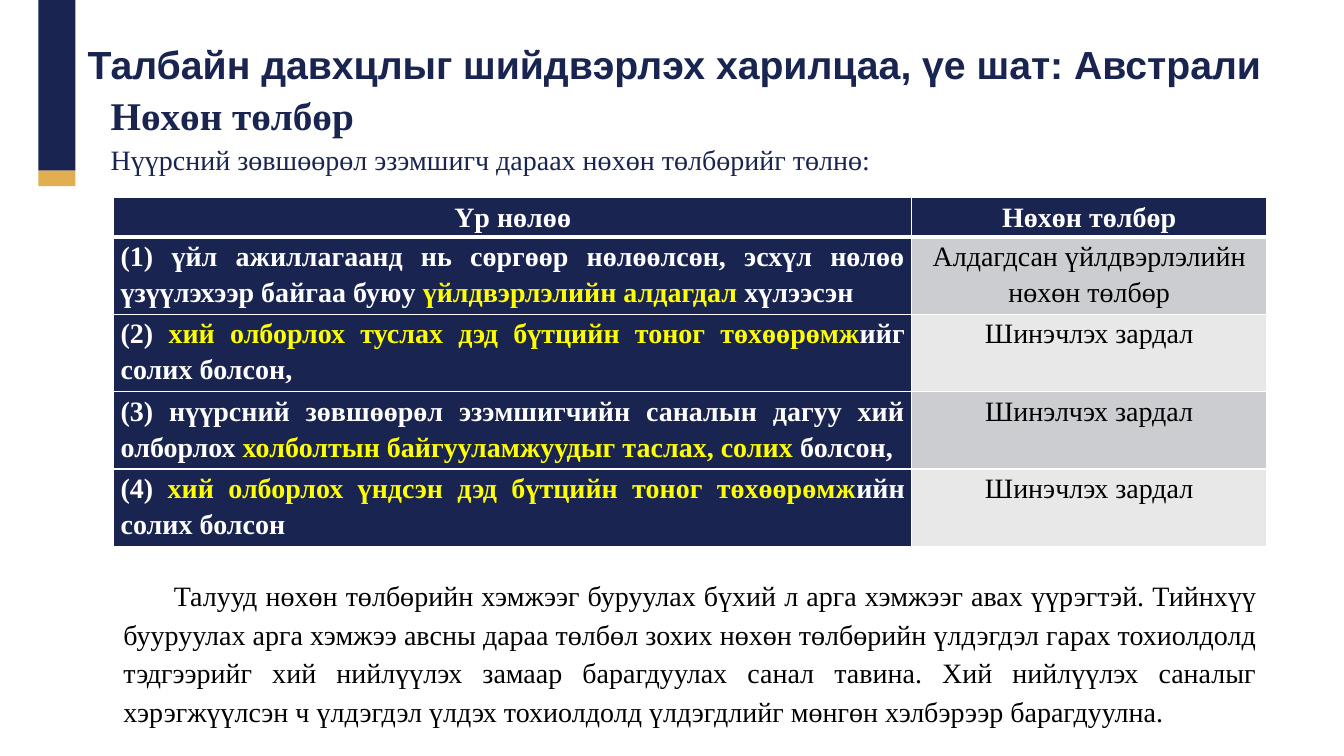
from dataclasses import dataclass

from lxml.etree import SubElement
from pptx import Presentation
from pptx.dml.color import RGBColor
from pptx.enum.shapes import MSO_SHAPE
from pptx.enum.text import MSO_ANCHOR, PP_ALIGN
from pptx.oxml.ns import qn
from pptx.util import Cm, Pt


@dataclass(frozen=True)
class Theme:
    """Colours, fonts and type sizes of the slide."""
    navy: str = "192450"
    gold: str = "E3AE50"
    white: str = "FFFFFF"
    black: str = "000000"
    yellow: str = "FFFF00"
    bands: tuple = ("CCCDD0", "E8E8E9")
    sans: str = "Arial"
    serif: str = "Times New Roman"
    large: int = 28
    body: int = 20


def apply(target, values):
    """Set every attribute named in values on target."""
    for name, value in values.items():
        setattr(target, name, value)


class SlideBuilder:
    """Draws elements on one slide in the style of a theme."""

    def __init__(self, page, theme):
        self.page = page
        self.theme = theme

    def bar(self, left, top, width, height, color):
        """Add a plain filled rectangle."""
        bar = self.page.shapes.add_shape(
            MSO_SHAPE.RECTANGLE, Cm(left), Cm(top), Cm(width), Cm(height))
        bar.shadow.inherit = False
        bar.fill.solid()
        bar.fill.fore_color.rgb = RGBColor.from_string(color)
        bar.line.fill.background()

    def fill_para(self, para, spans, layout, **font):
        """Fill a paragraph with (text, colour) spans."""
        apply(para, layout)
        values = {"name": self.theme.serif, "size": Pt(self.theme.body), "bold": False} | font
        for text, color in spans:
            span = para.add_run()
            span.text = text
            apply(span.font, values)
            span.font.color.rgb = RGBColor.from_string(color)

    def text_box(self, left, top, width, height, wrap=True):
        """Add an empty text box and return its text frame."""
        box = self.page.shapes.add_textbox(Cm(left), Cm(top), Cm(width), Cm(height))
        box.text_frame.word_wrap = wrap
        return box.text_frame

    def border(self, cell, top, bottom):
        """Draw white borders round a cell, one point wide at the sides."""
        properties = cell._tc.get_or_add_tcPr()
        for tag, width in (("a:lnL", 1), ("a:lnR", 1), ("a:lnT", top), ("a:lnB", bottom)):
            line = SubElement(properties, qn(tag), w=str(Pt(width)))
            SubElement(SubElement(line, qn("a:solidFill")), qn("a:srgbClr"), val=self.theme.white)

    def cell(self, cell, spans, fill, align, bold, top=1, bottom=1):
        """Style one table cell and set its text."""
        apply(cell, {"margin_left": Cm(0.18), "margin_right": Cm(0.18), "margin_top": 0,
                     "margin_bottom": 0, "vertical_anchor": MSO_ANCHOR.TOP})
        self.border(cell, top, bottom)
        cell.fill.solid()
        cell.fill.fore_color.rgb = RGBColor.from_string(fill)
        self.fill_para(cell.text_frame.paragraphs[0], spans,
                       {"alignment": align, "line_spacing": 1.15}, bold=bold)

    def table(self, left, top, widths, heights, headings, rows):
        """Add the table of impacts and compensations."""
        theme = self.theme
        table = self.page.shapes.add_table(
            len(heights), len(widths), Cm(left), Cm(top),
            Cm(sum(widths)), Cm(sum(heights))).table
        for column, width in zip(table.columns, widths):
            column.width = Cm(width)
        for row, height in zip(table.rows, heights):
            row.height = Cm(height)
        for index, heading in enumerate(headings):
            self.cell(table.cell(0, index), [(heading, theme.white)], theme.navy,
                      PP_ALIGN.CENTER, True, bottom=3)
        for index, (before, marked, after, payment) in enumerate(rows):
            line = index + 1
            top_width = 3 if index == 0 else 1
            impact = [(before, theme.white), (marked, theme.yellow), (after, theme.white)]
            self.cell(table.cell(line, 0), impact, theme.navy,
                      PP_ALIGN.JUSTIFY, True, top=top_width)
            self.cell(table.cell(line, 1), [(payment, theme.black)], theme.bands[index % 2],
                      PP_ALIGN.CENTER, False, top=top_width)


IMPACTS = [
    ("(1) үйл ажиллагаанд нь сөргөөр нөлөөлсөн, эсхүл нөлөө үзүүлэхээр байгаа буюу ",
     "үйлдвэрлэлийн алдагдал", " хүлээсэн", "Алдагдсан үйлдвэрлэлийн нөхөн төлбөр"),
    ("(2) ", "хий олборлох туслах дэд бүтцийн тоног төхөөрөмж", "ийг солих болсон,",
     "Шинэчлэх зардал"),
    ("(3) нүүрсний зөвшөөрөл эзэмшигчийн саналын дагуу хий олборлох ",
     "холболтын байгууламжуудыг таслах, солих ", "болсон,", "Шинэлчэх зардал"),
    ("(4) ", "хий олборлох үндсэн дэд бүтцийн тоног төхөөрөмж", "ийн солих болсон",
     "Шинэчлэх зардал"),
]
CLOSING = (
    "Талууд нөхөн төлбөрийн хэмжээг буруулах бүхий л арга хэмжээг авах үүрэгтэй. "
    "Тийнхүү бууруулах арга хэмжээ авсны дараа төлбөл зохих нөхөн төлбөрийн үлдэгдэл "
    "гарах тохиолдолд тэдгээрийг хий нийлүүлэх замаар барагдуулах санал тавина. "
    "Хий нийлүүлэх саналыг хэрэгжүүлсэн ч үлдэгдэл үлдэх тохиолдолд үлдэгдлийг мөнгөн "
    "хэлбэрээр барагдуулна.")


def main():
    """Build the slide and save the deck."""
    theme = Theme()
    deck = Presentation()
    apply(deck, {"slide_width": Cm(33.87), "slide_height": Cm(19.05)})
    builder = SlideBuilder(deck.slides.add_slide(deck.slide_layouts[6]), theme)

    builder.bar(0.97, 0, 0.93, 4.3, theme.navy)
    builder.bar(0.97, 4.3, 0.93, 0.39, theme.gold)

    intro = builder.text_box(2.54, 2.31, 29.36, 2.4)
    layout = {"alignment": PP_ALIGN.JUSTIFY, "line_spacing": 0.9, "space_before": Pt(5)}
    builder.fill_para(intro.paragraphs[0], [("Нөхөн төлбөр", theme.navy)], layout,
                      size=Pt(theme.large), bold=True)
    builder.fill_para(intro.add_paragraph(),
                      [("Нүүрсний зөвшөөрөл эзэмшигч дараах нөхөн төлбөрийг төлнө:", theme.navy)],
                      layout)

    title = builder.text_box(1.96, 0.89, 31.09, 1.45, wrap=False)
    builder.fill_para(title.paragraphs[0],
                      [("Талбайн давхцлыг шийдвэрлэх харилцаа, үе шат: Австрали", theme.navy)],
                      {}, name=theme.sans, size=Pt(theme.large), bold=True)

    builder.table(2.86, 4.98, [20.12, 8.94], [0.99] + [1.95] * len(IMPACTS),
                  ["Үр нөлөө", "Нөхөн төлбөр"], IMPACTS)

    closing = builder.text_box(2.86, 14.33, 29.06, 4.11).paragraphs[0]
    builder.fill_para(closing, [(CLOSING, theme.black)],
                      {"alignment": PP_ALIGN.JUSTIFY, "line_spacing": 1.15})
    closing._p.get_or_add_pPr().set("indent", str(Cm(1.27)))

    deck.save("out.pptx")


if __name__ == "__main__":
    main()
